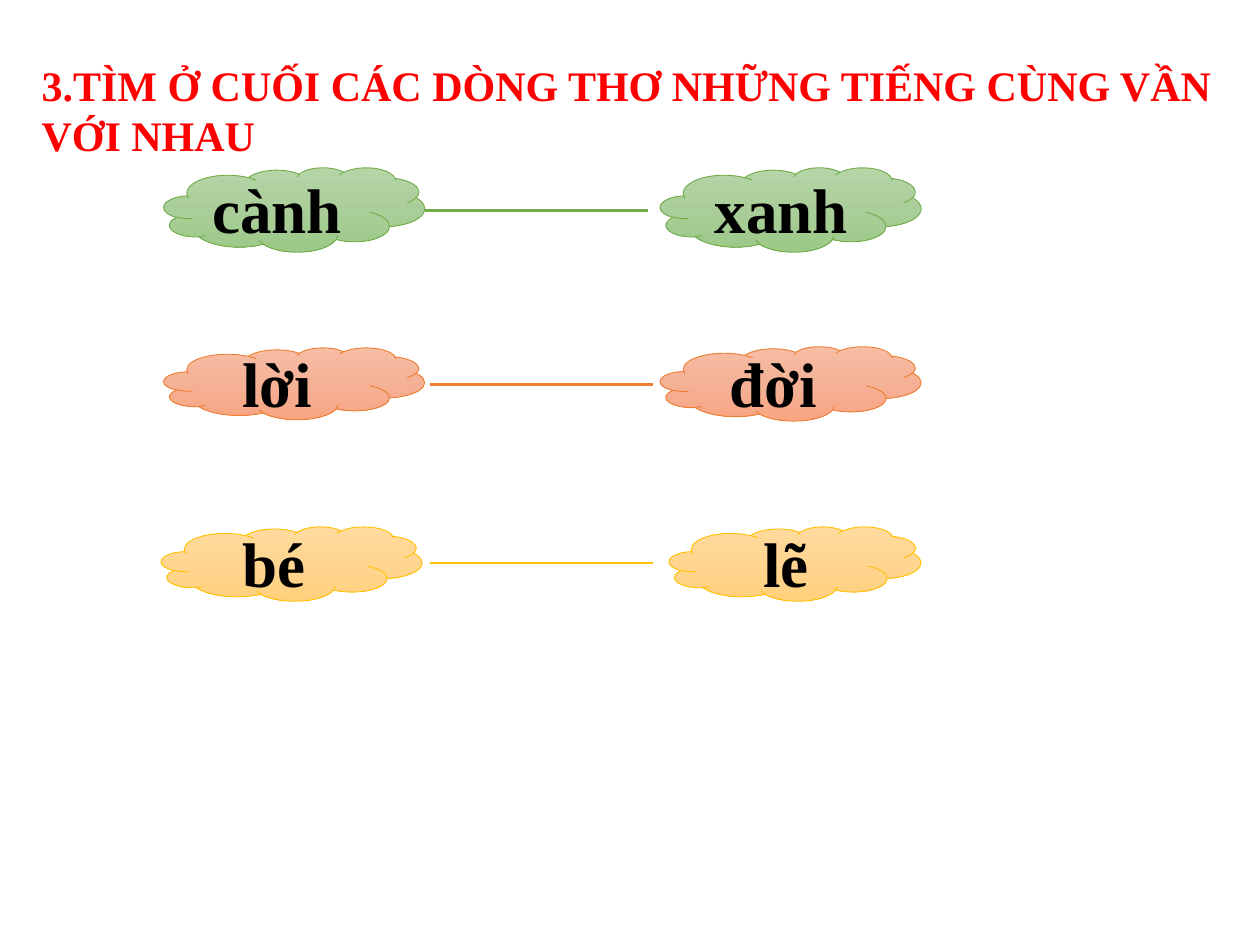
from copy import deepcopy

from pptx import Presentation
from pptx.dml.color import RGBColor
from pptx.enum.shapes import MSO_CONNECTOR, MSO_SHAPE
from pptx.enum.text import MSO_ANCHOR, PP_ALIGN
from pptx.oxml.ns import qn
from pptx.util import Inches, Pt
from lxml import etree

CLOUD = MSO_SHAPE.CLOUD
STRAIGHT = MSO_CONNECTOR.STRAIGHT
TOP, MIDDLE = MSO_ANCHOR.TOP, MSO_ANCHOR.MIDDLE
LEFT, CENTER = PP_ALIGN.LEFT, PP_ALIGN.CENTER
FONT = "Times New Roman"

# Gradient from top to bottom, then outline
GREEN = (("B5D5A7", "AACE9A", "9CC987"), "70AD47")
ORANGE = (("F7BDA5", "F5B196", "F8A582"), "ED7D31")
YELLOW = (("FFDB9E", "FFD590", "FFD07C"), "FFC000")

# Each rhyme: palette, (word, box) left, (word, box) right, line start and height
RHYMES = [
    (GREEN, ("cành ", (1.3, 1.33, 2.07, 0.67)),
     ("xanh ", (5.24, 1.33, 2.07, 0.67)), (3.37, 1.67)),
    (ORANGE, ("lời ", (1.3, 2.76, 2.07, 0.57)),
     ("đời ", (5.24, 2.75, 2.07, 0.59)), (3.41, 3.05)),
    (YELLOW, ("bé ", (1.28, 4.18, 2.07, 0.59)),
     ("lẽ", (5.31, 4.18, 2, 0.59)), (3.41, 4.47)),
]
LINK_LENGTH = 1.77


def color(value):
    return RGBColor.from_string(value)


def write(frame, words, size, ink, align, anchor):
    frame.word_wrap = True
    frame.vertical_anchor = anchor
    paragraph = frame.paragraphs[0]
    paragraph.alignment = align
    run = paragraph.add_run()
    run.text = words
    run.font.name = FONT
    run.font.size = Pt(size)
    run.font.bold = True
    run.font.color.rgb = color(ink)


def add_heading(slide, box, words):
    heading = slide.shapes.title
    heading.left, heading.top, heading.width, heading.height = map(Inches, box)
    write(heading.text_frame, words, 24, "FF0000", LEFT, TOP)


def fill_gradient(shape, shades):
    shape.fill.gradient()
    shape.fill.gradient_angle = 270
    # The default gradient has two stops; add one halfway
    stops = shape._element.spPr.find(qn("a:gradFill")).find(qn("a:gsLst"))
    middle = deepcopy(stops[0])
    middle.set("pos", "50000")
    stops.insert(1, middle)
    for stop, shade in zip(shape.fill.gradient_stops, shades):
        stop.color.rgb = color(shade)


def add_cloud(slide, box, word, shades, outline):
    cloud = slide.shapes.add_shape(CLOUD, *map(Inches, box))
    cloud.shadow.inherit = False
    fill_gradient(cloud, shades)
    cloud.line.color.rgb = color(outline)
    cloud.line.width = Pt(0.5)
    write(cloud.text_frame, word, 36, "000000", CENTER, MIDDLE)


def add_link(slide, left, y, outline):
    link = slide.shapes.add_connector(
        STRAIGHT, Inches(left), Inches(y), Inches(left + LINK_LENGTH), Inches(y))
    link.line.color.rgb = color(outline)
    link.line.width = Pt(1.5)
    etree.SubElement(link._element.spPr, qn("a:effectLst"))


def add_rhyme(slide, palette, left_cloud, right_cloud, link_start):
    shades, outline = palette
    for word, box in (left_cloud, right_cloud):
        add_cloud(slide, box, word, shades, outline)
    add_link(slide, *link_start, outline)


def main():
    deck = Presentation()
    deck.slide_width, deck.slide_height = Inches(10), Inches(7.5)
    slide = deck.slides.add_slide(deck.slide_layouts[5])

    add_heading(slide, (0.23, 0.42, 9.57, 0.91),
                "3.TÌM Ở CUỐI CÁC DÒNG THƠ NHỮNG TIẾNG CÙNG VẦN VỚI NHAU")
    for rhyme in RHYMES:
        add_rhyme(slide, *rhyme)

    deck.save("out.pptx")


if __name__ == "__main__":
    main()
